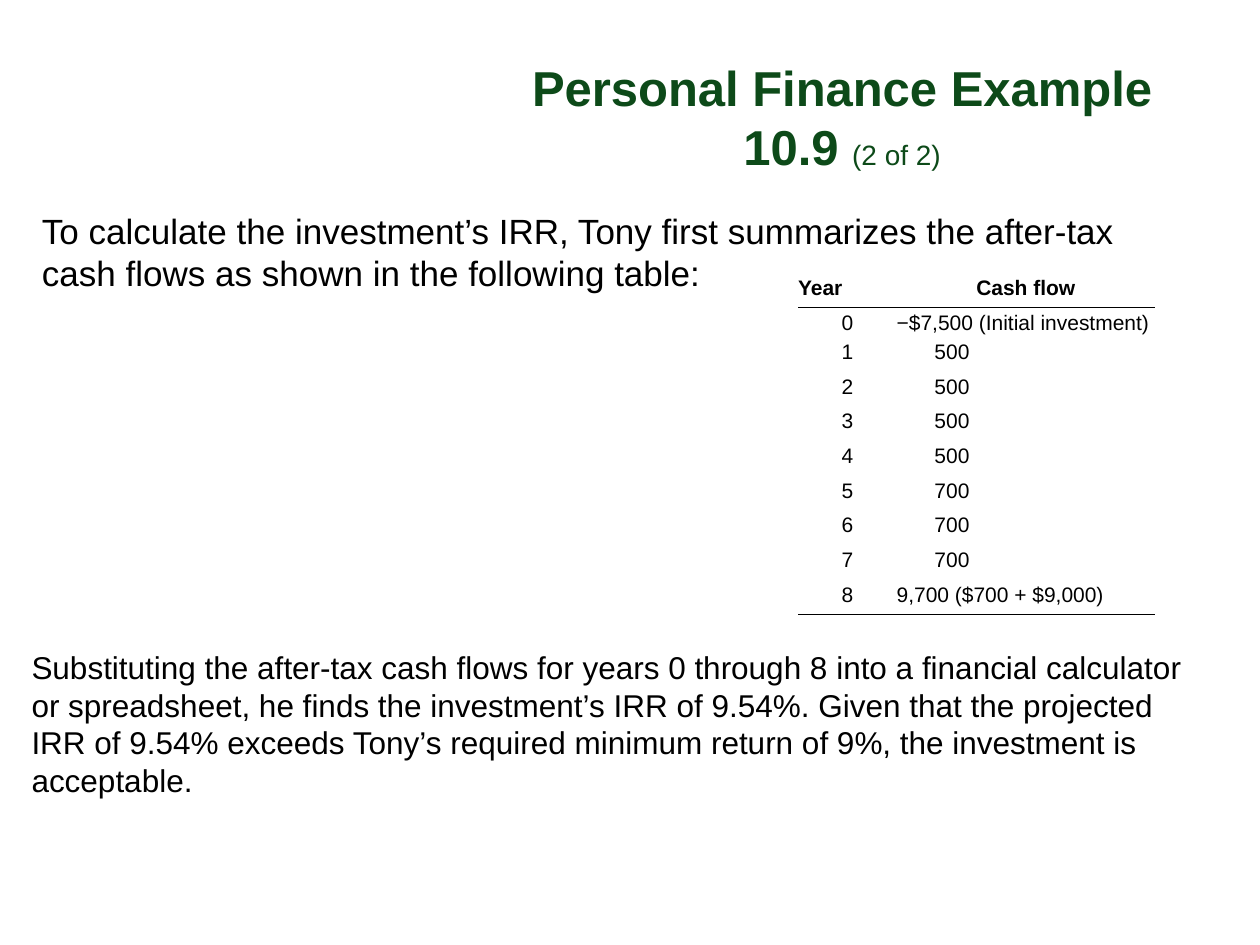
"""Build the slide on the internal rate of return of an investment."""
import pptx
import pptx.dml.color
import pptx.enum.text
import pptx.oxml
import pptx.oxml.ns
import pptx.util

ALIGN = pptx.enum.text.PP_ALIGN
ANCHOR = pptx.enum.text.MSO_ANCHOR
GREEN, BLACK = "0D4A19", "000000"
COLUMNS, ROWS = 120, 90
INDENT = 3.6
TABLE_AREA = (76, 26, 34, 32.3)
YEAR_WIDTH = 9.4
ROW_HEIGHT, FIRST_YEAR_HEIGHT = 3.31, 0.7
CASH_FLOWS = ["−$7,500 (Initial investment)", *["500"] * 4, *["700"] * 3,
              "9,700 ($700 + $9,000)"]


def grid(units):
    """Return the length of a number of grid units."""
    return round(units * pptx.util.Inches(10) / COLUMNS)


def color(value):
    """Return the colour of a hex string."""
    return pptx.dml.color.RGBColor.from_string(value)


def write(para, text, size=12, bold=False, fill=BLACK, align=ALIGN.LEFT,
          line_spacing=None, space_after=None):
    """Add a formatted span of text to a paragraph."""
    para.alignment = align
    if line_spacing:
        para.line_spacing = line_spacing
    if space_after:
        para.space_after = pptx.util.Pt(space_after)
    span = para.add_run()
    span.text = text
    span.font.name = "Arial"
    span.font.size = pptx.util.Pt(size)
    span.font.bold = bold
    span.font.color.rgb = color(fill)


def add_text_box(page, area, anchor=ANCHOR.TOP):
    """Add a wrapped box without margins and return its paragraph."""
    frame = page.shapes.add_textbox(*map(grid, area)).text_frame
    frame.word_wrap = True
    frame.vertical_anchor = anchor
    frame.margin_left = frame.margin_right = 0
    frame.margin_top = frame.margin_bottom = 0
    return frame.paragraphs[0]


def set_borders(cell, ruled):
    """Rule the named sides of a cell and clear the others."""
    properties = cell._tc.get_or_add_tcPr()
    namespace = pptx.oxml.ns.nsdecls("a")
    for side in "LRTB":
        paint = (f'<a:solidFill><a:srgbClr val="{BLACK}"/></a:solidFill>'
                 if side in ruled else "<a:noFill/>")
        properties.append(pptx.oxml.parse_xml(
            f'<a:ln{side} {namespace} w="{pptx.util.Pt(1)}">{paint}</a:ln{side}>'))


def fill_cell(cell, text, ruled="", indent=0, **style):
    """Write one table cell with its margins and borders."""
    cell.margin_left = grid(indent)
    cell.margin_right = cell.margin_top = cell.margin_bottom = 0
    set_borders(cell, ruled)
    cell.fill.background()
    write(cell.text_frame.paragraphs[0], text, line_spacing=1.15,
          space_after=10, **style)


def add_cash_flow_table(page):
    """Add the table of cash flows by year."""
    last = len(CASH_FLOWS)
    holder = page.shapes.add_table(last + 1, 2, *map(grid, TABLE_AREA))
    table = holder.table
    table.first_row = table.horz_banding = False
    table.columns[0].width = grid(YEAR_WIDTH)
    table.columns[1].width = grid(TABLE_AREA[2] - YEAR_WIDTH)
    for index, row in enumerate(table.rows):
        row.height = grid(FIRST_YEAR_HEIGHT if index == 1 else ROW_HEIGHT)
    holder.height = grid(TABLE_AREA[3])
    fill_cell(table.cell(0, 0), "Year", "B", bold=True)
    fill_cell(table.cell(0, 1), "Cash flow", "B", bold=True, align=ALIGN.CENTER)
    for year, amount in enumerate(CASH_FLOWS):
        row = year + 1
        ruled = {1: "T", last: "B"}.get(row, "")
        fill_cell(table.cell(row, 0), str(year), ruled, align=ALIGN.CENTER)
        fill_cell(table.cell(row, 1), amount, ruled,
                  indent=INDENT if amount.isdigit() else 0)


def main():
    """Build and save the deck."""
    deck = pptx.Presentation()
    deck.slide_width, deck.slide_height = grid(COLUMNS), grid(ROWS)
    page = deck.slides.add_slide(deck.slide_layouts[6])
    title = add_text_box(page, (46.7, 5.3, 67, 11.4), ANCHOR.BOTTOM)
    write(title, "Personal Finance Example 10.9 ", size=28, bold=True,
          fill=GREEN, align=ALIGN.CENTER)
    write(title, "(2 of 2)", size=16, fill=GREEN, align=ALIGN.CENTER)
    write(add_text_box(page, (4, 20, 108, 8)),
          "To calculate the investment’s IRR, Tony first summarizes the "
          "after-tax cash flows as shown in the following table:", size=20)
    add_cash_flow_table(page)
    write(add_text_box(page, (3, 61.7, 110, 16.5)),
          "Substituting the after-tax cash flows for years 0 through 8 into a "
          "financial calculator or spreadsheet, he finds the investment’s IRR "
          "of 9.54%. Given that the projected IRR of 9.54% exceeds Tony’s "
          "required minimum return of 9%, the investment is acceptable.",
          size=18)
    deck.save("out.pptx")


if __name__ == "__main__":
    main()
